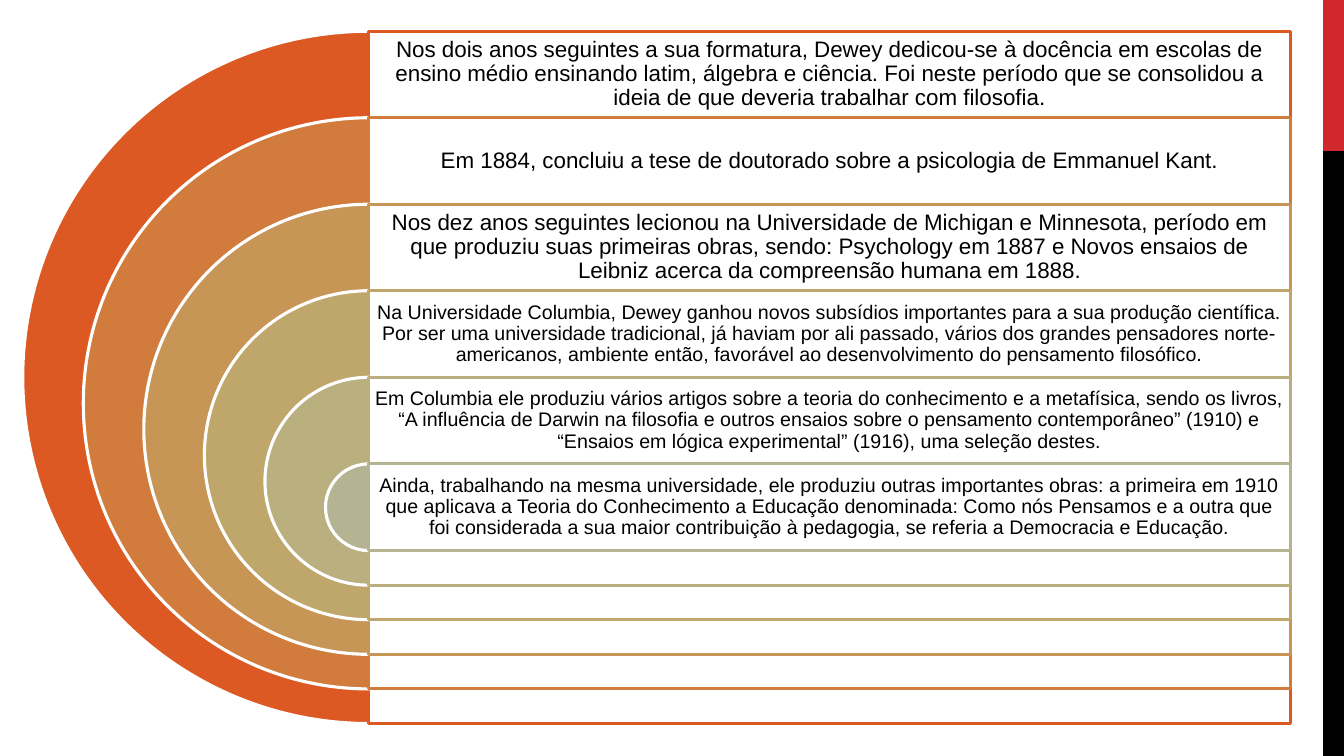
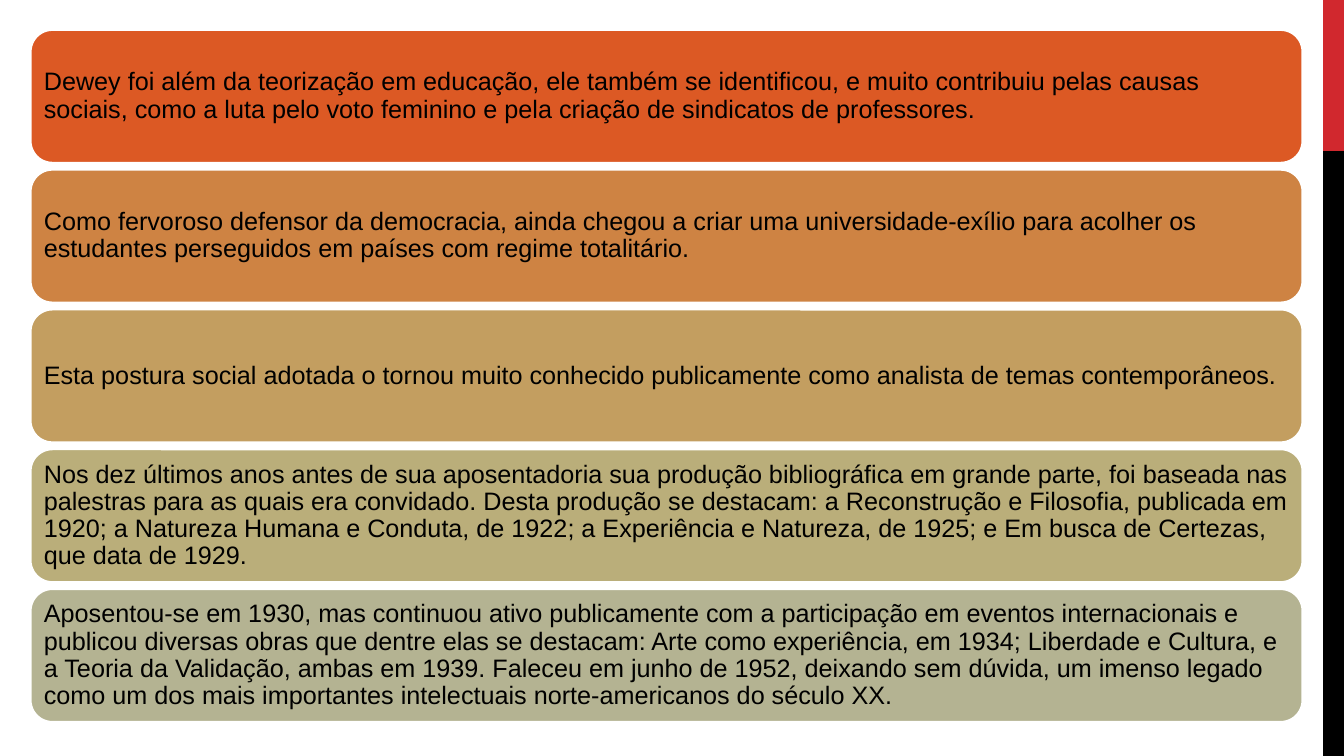
"""Builds two slides of stacked text: nested arcs, then rounded cards."""
from dataclasses import dataclass

from lxml import etree
from pptx import Presentation, slide as sl, util as u
from pptx.dml.color import RGBColor
from pptx.dml.fill import FillFormat
from pptx.enum import shapes, text
from pptx.oxml.ns import qn
from pptx.shapes.autoshape import Shape

SLIDE_WIDTH, SLIDE_HEIGHT = 960, 540
WHITE, BLACK, RED = "FFFFFF", "000000", "D1282E"
FONT = "Arial"
OUTLINE = 2.25
INSET_RATIO = 0.29

BAND_LEFT, BAND_SPLIT = 945, 108

ARC_CENTER, ARC_TOP = 263.5, 22.3
ARC_SMALLEST, ARC_GROWTH = 62, 86.5
ROW_WIDTH, ROW_STEP = 658, 61.8

CARD_LEFT, CARD_TOP = 21.5, 21
CARD_WIDTH, CARD_HEIGHT, CARD_STEP = 909.3, 95.7, 99.85


@dataclass(frozen=True)
class Frame:
    left: float
    top: float
    width: float
    height: float

    def lengths(self) -> tuple[u.Length, ...]:
        return tuple(u.Pt(n) for n in (self.left, self.top, self.width, self.height))


@dataclass(frozen=True)
class Entry:
    color: str
    size: int
    wording: str


CAREER = [
    Entry("DC5924", 16, "Nos dois anos seguintes a sua formatura, Dewey dedicou-se à docência em "
          "escolas de ensino médio ensinando latim, álgebra e ciência. Foi neste período que se "
          "consolidou a ideia de que deveria trabalhar com filosofia."),
    Entry("D17C3D", 16, "Em 1884, concluiu a tese de doutorado sobre a psicologia de Emmanuel Kant."),
    Entry("C79555", 16, "Nos dez anos seguintes lecionou na Universidade de Michigan e Minnesota, "
          "período em que produziu suas primeiras obras, sendo: Psychology em 1887 e Novos ensaios "
          "de Leibniz acerca da compreensão humana em 1888."),
    Entry("BFA66B", 14, "Na Universidade Columbia, Dewey ganhou novos subsídios importantes para a "
          "sua produção científica. Por ser uma universidade tradicional, já haviam por ali "
          "passado, vários dos grandes pensadores norte-americanos, ambiente então, favorável ao "
          "desenvolvimento do pensamento filosófico."),
    Entry("B9AF7F", 14, "Em Columbia ele produziu vários artigos sobre a teoria do conhecimento e a "
          "metafísica, sendo os livros, “A influência de Darwin na filosofia e outros ensaios "
          "sobre o pensamento contemporâneo” (1910) e “Ensaios em lógica experimental” (1916), "
          "uma seleção destes."),
    Entry("B4B392", 14, "Ainda, trabalhando na mesma universidade, ele produziu outras importantes "
          "obras: a primeira em 1910 que aplicava a Teoria do Conhecimento a Educação denominada: "
          "Como nós Pensamos e a outra que foi considerada a sua maior contribuição à pedagogia, "
          "se referia a Democracia e Educação."),
]

LEGACY = [
    Entry("DC5924", 18, "Dewey foi além da teorização em educação, ele também se identificou, e "
          "muito contribuiu pelas causas sociais, como a luta pelo voto feminino e pela criação "
          "de sindicatos de professores."),
    Entry("CE8343", 18, "Como fervoroso defensor da democracia, ainda chegou a criar uma "
          "universidade-exílio para acolher os estudantes perseguidos em países com regime "
          "totalitário."),
    Entry("C39E60", 18, "Esta postura social adotada o tornou muito conhecido publicamente como "
          "analista de temas contemporâneos."),
    Entry("BAAE7A", 18, "Nos dez últimos anos antes de sua aposentadoria sua produção bibliográfica "
          "em grande parte, foi baseada nas palestras para as quais era convidado. Desta produção "
          "se destacam: a Reconstrução e Filosofia, publicada em 1920; a Natureza Humana e "
          "Conduta, de 1922; a Experiência e Natureza, de 1925; e Em busca de Certezas, que data "
          "de 1929."),
    Entry("B4B392", 18, "Aposentou-se em 1930, mas continuou ativo publicamente com a participação "
          "em eventos internacionais e publicou diversas obras que dentre elas se destacam: Arte "
          "como experiência, em 1934; Liberdade e Cultura, e a Teoria da Validação, ambas em "
          "1939. Faleceu em junho de 1952, deixando sem dúvida, um imenso legado como um dos mais "
          "importantes intelectuais norte-americanos do século XX."),
]


def paint(fill: FillFormat, color: str) -> None:
    fill.solid()
    fill.fore_color.rgb = RGBColor.from_string(color)


def set_opacity(shape: Shape, percent: int) -> None:
    color = shape.fill._xPr.find(qn("a:solidFill"))[0]
    etree.SubElement(color, qn("a:alpha")).set("val", str(percent * 1000))


def add_box(page: sl.Slide, kind: shapes.MSO_SHAPE, frame: Frame, color: str,
            outline: str | None = None) -> Shape:
    box = page.shapes.add_shape(kind, *frame.lengths())
    box.shadow.inherit = False
    paint(box.fill, color)
    if outline is None:
        box.line.fill.background()
    else:
        paint(box.line.fill, outline)
        box.line.width = u.Pt(OUTLINE)
    return box


def write(box: Shape, entry: Entry, align: text.PP_ALIGN) -> None:
    body = box.text_frame
    body.word_wrap = True
    body.vertical_anchor = text.MSO_ANCHOR.MIDDLE
    inset = u.Pt(INSET_RATIO * entry.size)
    body.margin_left = body.margin_top = body.margin_right = body.margin_bottom = inset
    para = body.paragraphs[0]
    para.alignment = align
    para.line_spacing = 0.9
    span = para.add_run()
    span.text = entry.wording
    span.font.name = FONT
    span.font.size = u.Pt(entry.size)
    paint(span.font.fill, BLACK)


def add_page(deck: Presentation) -> sl.Slide:
    page = deck.slides.add_slide(deck.slide_layouts[6])
    paint(page.background.fill, WHITE)
    width = SLIDE_WIDTH - BAND_LEFT
    for top, bottom, color in ((0, BAND_SPLIT, RED), (BAND_SPLIT, SLIDE_HEIGHT, BLACK)):
        add_box(page, shapes.MSO_SHAPE.RECTANGLE,
                Frame(BAND_LEFT, top, width, bottom - top), color)
    return page


def draw_career(page: sl.Slide) -> None:
    for index, entry in enumerate(CAREER):
        top = ARC_TOP + index * ROW_STEP
        diameter = ARC_SMALLEST + ARC_GROWTH * (len(CAREER) - 1 - index)
        arc = add_box(page, shapes.MSO_SHAPE.PIE,
                      Frame(ARC_CENTER - diameter / 2, top, diameter, diameter),
                      entry.color, WHITE)
        arc.adjustments[0], arc.adjustments[1] = 54, 162
        panel = add_box(page, shapes.MSO_SHAPE.RECTANGLE,
                        Frame(ARC_CENTER, top, ROW_WIDTH, diameter), WHITE, entry.color)
        set_opacity(panel, 90)
        row = Frame(ARC_CENTER, top, ROW_WIDTH, ROW_STEP)
        write(page.shapes.add_textbox(*row.lengths()), entry, text.PP_ALIGN.CENTER)


def draw_legacy(page: sl.Slide) -> None:
    for index, entry in enumerate(LEGACY):
        frame = Frame(CARD_LEFT, CARD_TOP + index * CARD_STEP, CARD_WIDTH, CARD_HEIGHT)
        card = add_box(page, shapes.MSO_SHAPE.ROUNDED_RECTANGLE, frame, entry.color, WHITE)
        write(card, entry, text.PP_ALIGN.LEFT)


def main() -> None:
    deck = Presentation()
    deck.slide_width, deck.slide_height = u.Pt(SLIDE_WIDTH), u.Pt(SLIDE_HEIGHT)
    draw_career(add_page(deck))
    draw_legacy(add_page(deck))
    deck.save("out.pptx")


if __name__ == "__main__":
    main()
